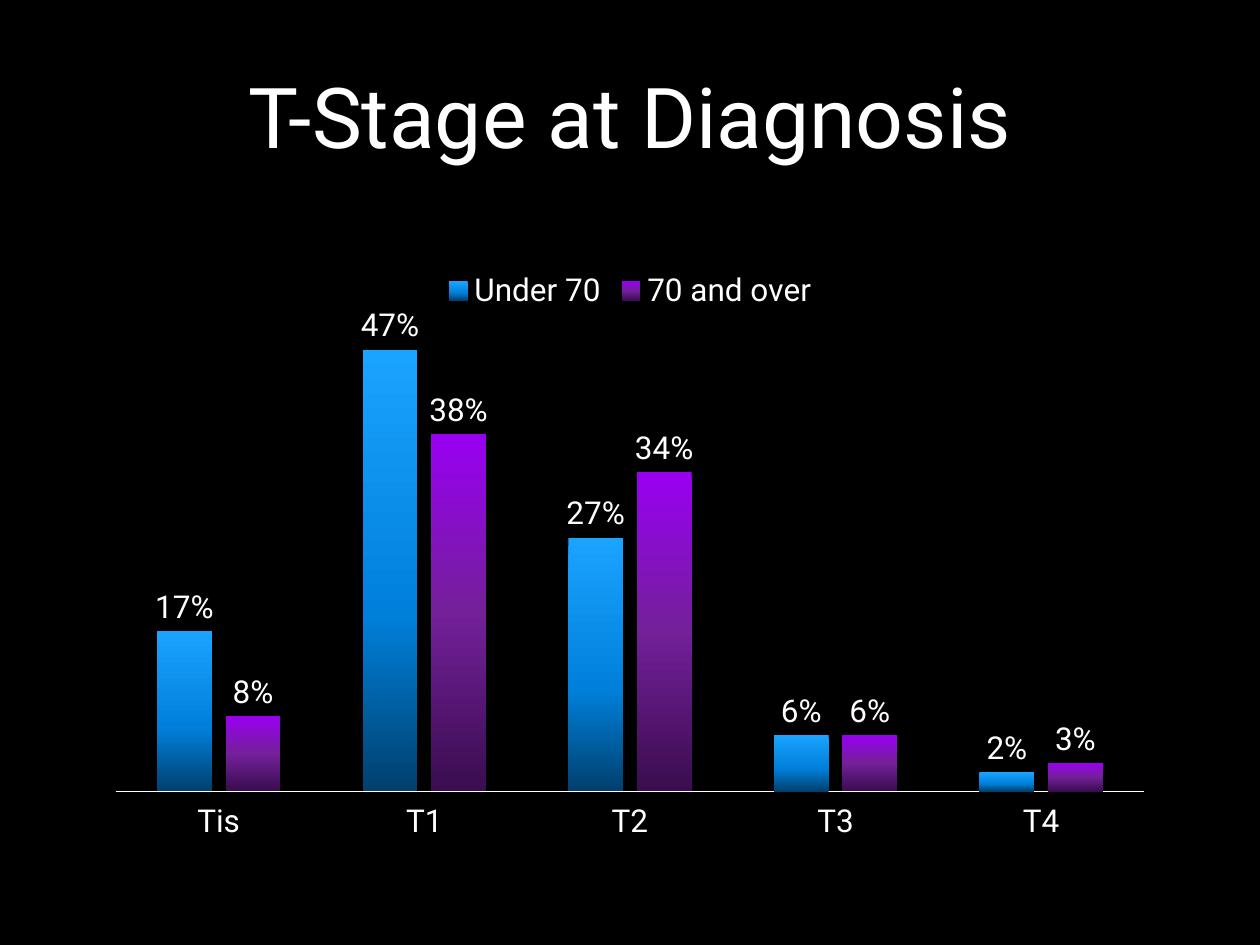
from copy import deepcopy
from dataclasses import dataclass

from lxml import etree
from pptx import Presentation
from pptx.chart.data import CategoryChartData
from pptx.dml.color import RGBColor
from pptx.enum.chart import (XL_CHART_TYPE, XL_LABEL_POSITION,
                             XL_LEGEND_POSITION, XL_TICK_LABEL_POSITION, XL_TICK_MARK)
from pptx.enum.text import MSO_ANCHOR, PP_ALIGN
from pptx.oxml.ns import qn
from pptx.util import Inches, Pt

COLUMNS = XL_CHART_TYPE.COLUMN_CLUSTERED
LABELS_ABOVE = XL_LABEL_POSITION.OUTSIDE_END
LEGEND_TOP = XL_LEGEND_POSITION.TOP
NO_TICK = XL_TICK_MARK.NONE
LABELS_LOW = XL_TICK_LABEL_POSITION.LOW
MIDDLE = MSO_ANCHOR.MIDDLE
CENTER = PP_ALIGN.CENTER

WIDTH, HEIGHT = Inches(10), Inches(7.5)
MARGIN, CONTENT = Inches(0.75), Inches(8.5)
FONT = "Roboto"
PERCENT = "0%"
COLORS = {
    "background": "000000", "text": "FFFFFF",
    "blue top": "1AA3FF", "blue middle": "0080DB", "blue bottom": "00406E",
    "purple top": "9900F2", "purple middle": "732099", "purple bottom": "3A0D50",
}
STAGES = ["Tis", "T1", "T2", "T3", "T4"]


@dataclass
class AgeGroup:
    name: str
    shares: list[float]
    hue: str
    middle: float  # position of the middle gradient stop


AGE_GROUPS = [
    AgeGroup("Under 70", [0.17, 0.47, 0.27, 0.06, 0.02], "blue", 0.6),
    AgeGroup("70 and over", [0.08, 0.38, 0.34, 0.06, 0.03], "purple", 0.5),
]


def color(name: str) -> RGBColor:
    return RGBColor.from_string(COLORS[name])


def style_font(font, size: float) -> None:
    font.name, font.size = FONT, Pt(size)
    font.color.rgb = color("text")


def write_text(shape, text: str, *, size: float, align=CENTER, anchor=MIDDLE) -> None:
    frame = shape.text_frame
    frame.word_wrap = True
    frame.vertical_anchor = anchor
    paragraph = frame.paragraphs[0]
    paragraph.alignment = align
    run = paragraph.add_run()
    run.text = text
    style_font(run.font, size)


def fill_bars(series, group: AgeGroup) -> None:
    """Three-stop gradient running from the top of each bar to its foot."""
    fill = series.format.fill
    fill.gradient()
    fill.gradient_angle = 270
    first_stop = next(series.format._element.iter(qn("a:gs")))
    first_stop.addnext(deepcopy(first_stop))
    levels = (("top", 0), ("middle", group.middle), ("bottom", 1))
    for stop, (level, position) in zip(fill.gradient_stops, levels):
        stop.color.rgb = color(f"{group.hue} {level}")
        stop.position = position


def place_plot(chart, **shares: float) -> None:
    """Fix the inner plot area as shares of the chart's size."""
    plot_area = chart._chartSpace.find(".//" + qn("c:plotArea"))
    layout = plot_area.find(qn("c:layout"))
    if layout is None:
        layout = etree.Element(qn("c:layout"))
        plot_area.insert(0, layout)
    manual = etree.SubElement(layout, qn("c:manualLayout"))
    settings = {"layoutTarget": "inner", "xMode": "edge", "yMode": "edge", **shares}
    for name, value in settings.items():
        etree.SubElement(manual, qn(f"c:{name}")).set("val", str(value))


def add_stage_chart(slide) -> None:
    data = CategoryChartData(number_format=PERCENT)
    data.categories = STAGES
    for group in AGE_GROUPS:
        data.add_series(group.name, group.shares)
    chart = slide.shapes.add_chart(
        COLUMNS, MARGIN, Inches(2.04), CONTENT, Inches(4.66), data).chart
    style_font(chart.font, 18)
    chart.has_title = False
    chart.has_legend = True
    chart.legend.position = LEGEND_TOP
    chart.legend.include_in_layout = False
    place_plot(chart, x=0.02, y=0.11, w=0.96, h=0.8)

    # Axes
    value_axis, category_axis = chart.value_axis, chart.category_axis
    value_axis.minimum_scale, value_axis.maximum_scale = 0, 0.5
    value_axis.has_major_gridlines = False
    value_axis.tick_labels.number_format = PERCENT
    value_axis.tick_labels.number_format_is_linked = False
    value_axis.visible = False
    category_axis.major_tick_mark = category_axis.minor_tick_mark = NO_TICK
    category_axis.tick_label_position = LABELS_LOW
    category_axis.format.line.color.rgb = color("text")
    category_axis.format.line.width = Pt(0.75)

    # Bars and their labels
    plot = chart.plots[0]
    plot.gap_width, plot.overlap = 150, -25
    plot.vary_by_categories = False
    for series, group in zip(plot.series, AGE_GROUPS):
        series.invert_if_negative = False
        fill_bars(series, group)
        labels = series.data_labels
        labels.show_value = True
        labels.number_format = PERCENT
        labels.number_format_is_linked = False
        labels.position = LABELS_ABOVE
        style_font(labels.font, 18)


def main() -> None:
    presentation = Presentation()
    presentation.slide_width, presentation.slide_height = WIDTH, HEIGHT
    slide = presentation.slides.add_slide(presentation.slide_layouts[5])
    slide.background.fill.solid()
    slide.background.fill.fore_color.rgb = color("background")

    # Title
    title = slide.shapes.title
    title.left, title.top = MARGIN, Inches(0.13)
    title.width, title.height = CONTENT, Inches(1.56)
    write_text(title, "T-Stage at Diagnosis", size=48)

    # Chart
    add_stage_chart(slide)
    presentation.save("out.pptx")


if __name__ == "__main__":
    main()
